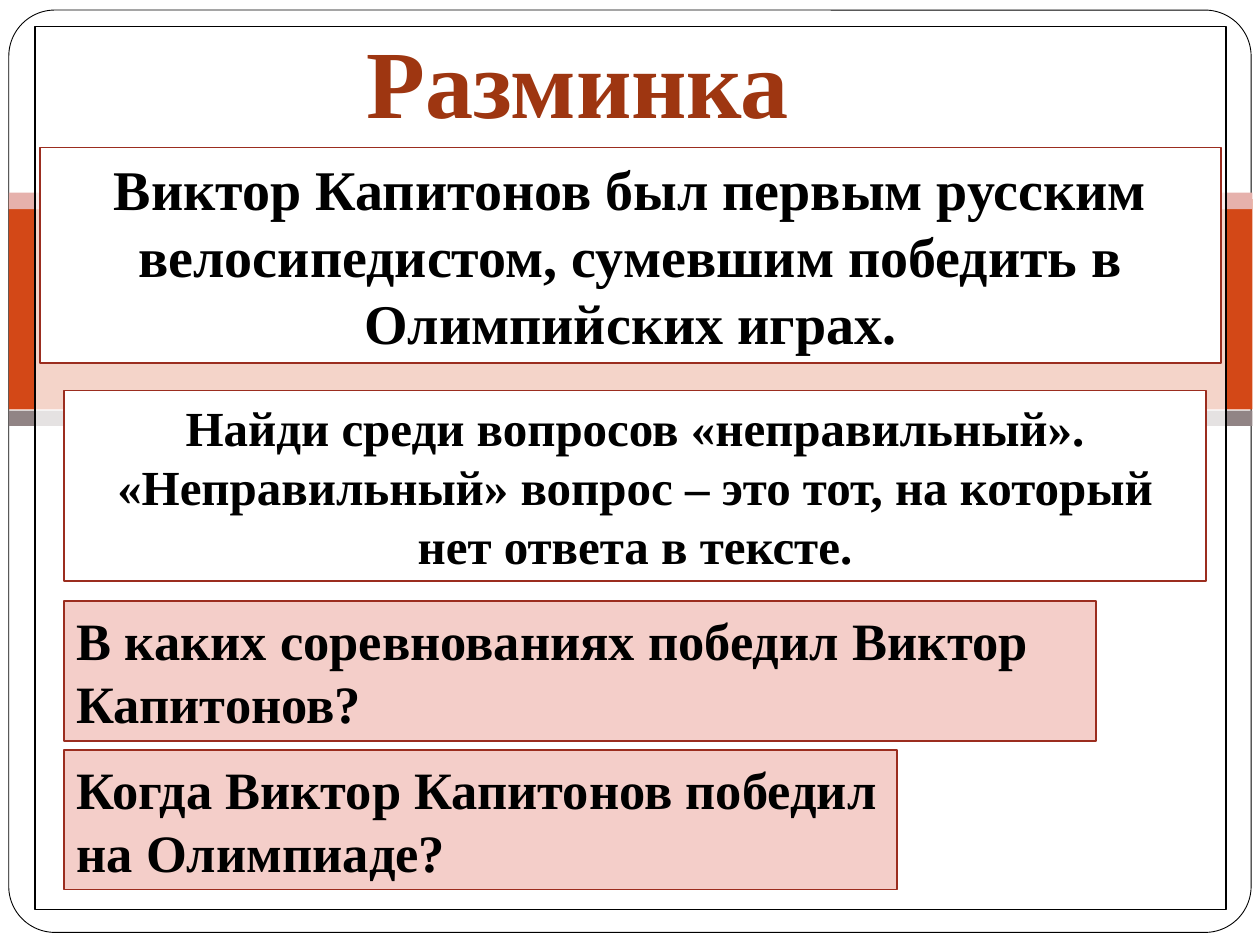
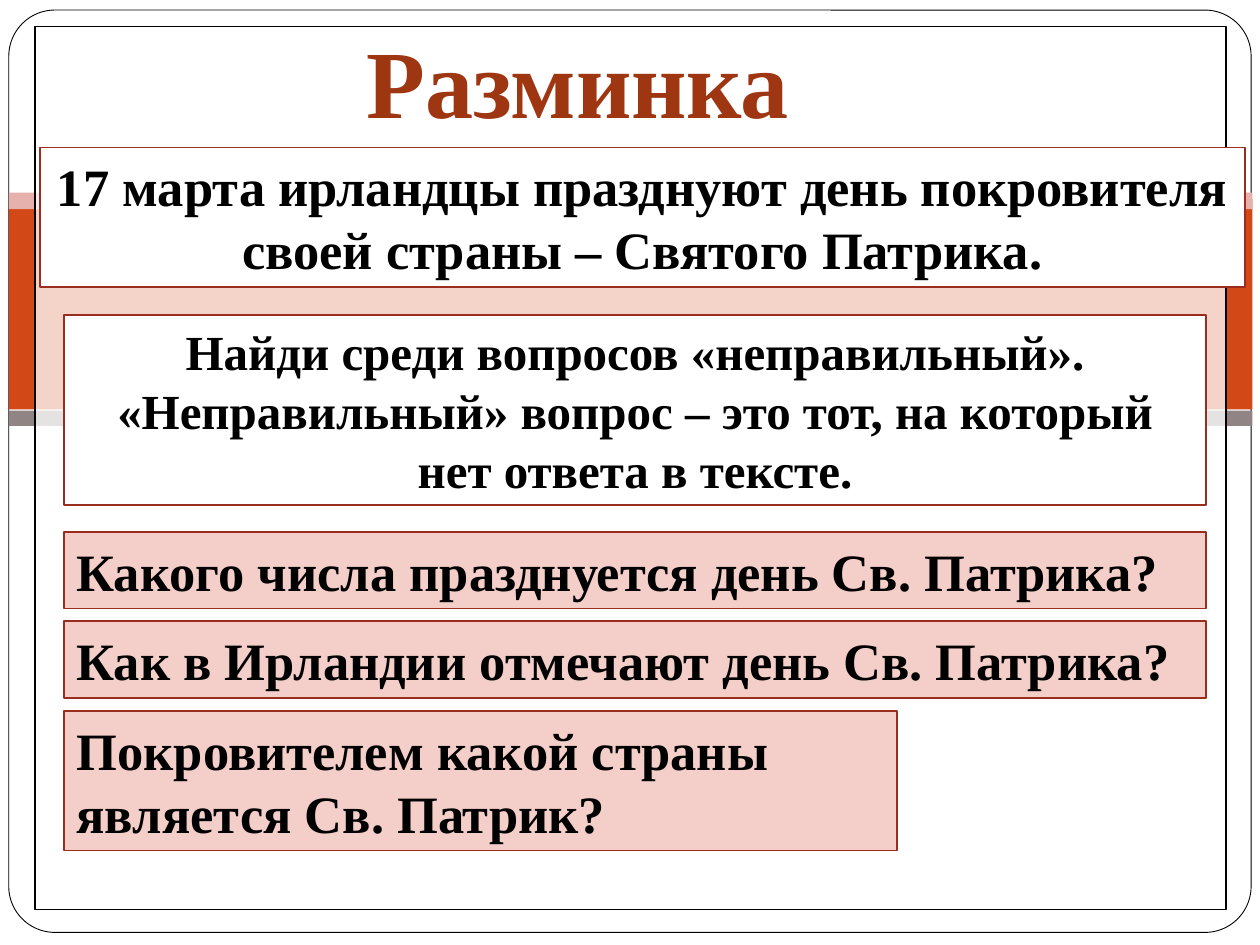
from dataclasses import dataclass
from typing import Any

from pptx import Presentation
from pptx.dml.color import RGBColor
from pptx.enum.shapes import MSO_SHAPE as Form
from pptx.enum.text import MSO_ANCHOR as Anchor
from pptx.enum.text import MSO_AUTO_SIZE as Fit
from pptx.enum.text import PP_ALIGN as Align
from pptx.oxml.ns import qn
from pptx.util import Inches, Pt
from lxml.etree import SubElement as Sub

FONT = "Times New Roman"
WHITE, BLACK = "FFFFFF", "000000"
RUST, BRICK, PINK = "9E3611", "9B2D1F", "F4CEC9"
LEFT, WIDE, MID = 0.51, 9.06, 6.61
TASK = ("Найди среди вопросов «неправильный». "
        "«Неправильный» вопрос – это тот, на который нет ответа в тексте.")


@dataclass
class Panel:
    left: float
    top: float
    width: float
    height: float
    fill: str
    line: str = ""
    weight: float = 1
    form: Any = Form.RECTANGLE
    round: float = 0
    alpha: int = 100


@dataclass
class Card:
    text: str
    width: float
    rows: int = 1
    size: int = 30
    left: float = LEFT
    fill: str = PINK
    align: Any = Align.LEFT

    def height(self) -> float:
        return round(0.11 + self.rows * self.size * 1.2 / 72, 2)


@dataclass
class Page:
    fact: Card
    task: float
    first: float
    gap: float
    cards: list[Card]


FRAME = [
    Panel(0.07, 0.08, 9.86, 7.32, WHITE, BLACK, 0.5, Form.ROUNDED_RECTANGLE, 0.05),
    Panel(0.07, 1.58, 9.87, 1.67, "D34817"),
    Panel(0.07, 1.53, 9.87, 0.13, "E6B1AC"),
    Panel(0.07, 3.26, 9.87, 0.12, "918485"),
    Panel(0.28, 0.21, 9.45, 7.01, WHITE, BLACK, alpha=77),
]

PAGES = [
    Page(
        Card("Виктор Капитонов был первым русским велосипедистом, "
             "сумевшим победить в Олимпийских играх.",
             9.37, 3, 32, 0.32, WHITE, Align.CENTER),
        3.1, 4.77, 0.07,
        [Card("В каких соревнованиях победил Виктор Капитонов?", 8.19, 2),
         Card("Когда Виктор Капитонов победил на Олимпиаде?", MID, 2)],
    ),
    Page(
        Card("17 марта ирландцы празднуют день покровителя "
             "своей страны – Святого Патрика.",
             9.56, 2, 30, 0.32, WHITE, Align.CENTER),
        2.5, 4.22, 0.1,
        [Card("Какого числа празднуется день Св. Патрика?", WIDE),
         Card("Как в Ирландии отмечают день Св. Патрика?", WIDE),
         Card("Покровителем какой страны является Св. Патрик?", MID, 2)],
    ),
]


def tint(code: str) -> RGBColor:
    return RGBColor.from_string(code)


def apply(item: Any, form: dict[str, Any]) -> None:
    for key, value in form.items():
        setattr(item, key, value)


def draw(slide: Any, panel: Panel) -> Any:
    box = map(Inches, (panel.left, panel.top, panel.width, panel.height))
    shape = slide.shapes.add_shape(panel.form, *box)
    shape.shadow.inherit = False
    if panel.round:
        shape.adjustments[0] = panel.round
    shape.fill.solid()
    shape.fill.fore_color.rgb = tint(panel.fill)
    if panel.alpha < 100:
        color = shape.fill._xPr.find(qn("a:solidFill"))[0]
        Sub(color, qn("a:alpha"), val=str(panel.alpha * 1000))
    if panel.line:
        shape.line.color.rgb = tint(panel.line)
        shape.line.width = Pt(panel.weight)
    else:
        shape.line.fill.background()
    return shape


def write(shape: Any, text: str, size: int, color: str,
          align: Any = Align.LEFT, anchor: Any = Anchor.TOP) -> None:
    frame = shape.text_frame
    apply(frame, {"word_wrap": True, "auto_size": Fit.SHAPE_TO_FIT_TEXT,
                  "vertical_anchor": anchor})
    para = frame.paragraphs[0]
    para.alignment = align
    run = para.add_run()
    run.text = text
    apply(run.font, {"name": FONT, "size": Pt(size), "bold": True})
    run.font.color.rgb = tint(color)


def place(slide: Any, card: Card, top: float) -> None:
    panel = Panel(card.left, top, card.width, card.height(), card.fill, BRICK)
    write(draw(slide, panel), card.text, card.size, BLACK, card.align, Anchor.MIDDLE)


def build(deck: Any, page: Page) -> None:
    slide = deck.slides.add_slide(deck.slide_layouts[6])
    for panel in FRAME:
        draw(slide, panel)
    title = slide.shapes.add_textbox(*map(Inches, (2.81, 0.13, 4.31, 1.03)))
    write(title, "Разминка", 55, RUST)
    place(slide, page.fact, 1.17)
    place(slide, Card(TASK, WIDE, 3, 28, LEFT, WHITE, Align.CENTER), page.task)
    top = page.first
    for card in page.cards:
        place(slide, card, top)
        top += card.height() + page.gap


def main() -> None:
    deck = Presentation()
    apply(deck, {"slide_width": Inches(10), "slide_height": Inches(7.5)})
    for page in PAGES:
        build(deck, page)
    deck.save("out.pptx")


if __name__ == "__main__":
    main()
